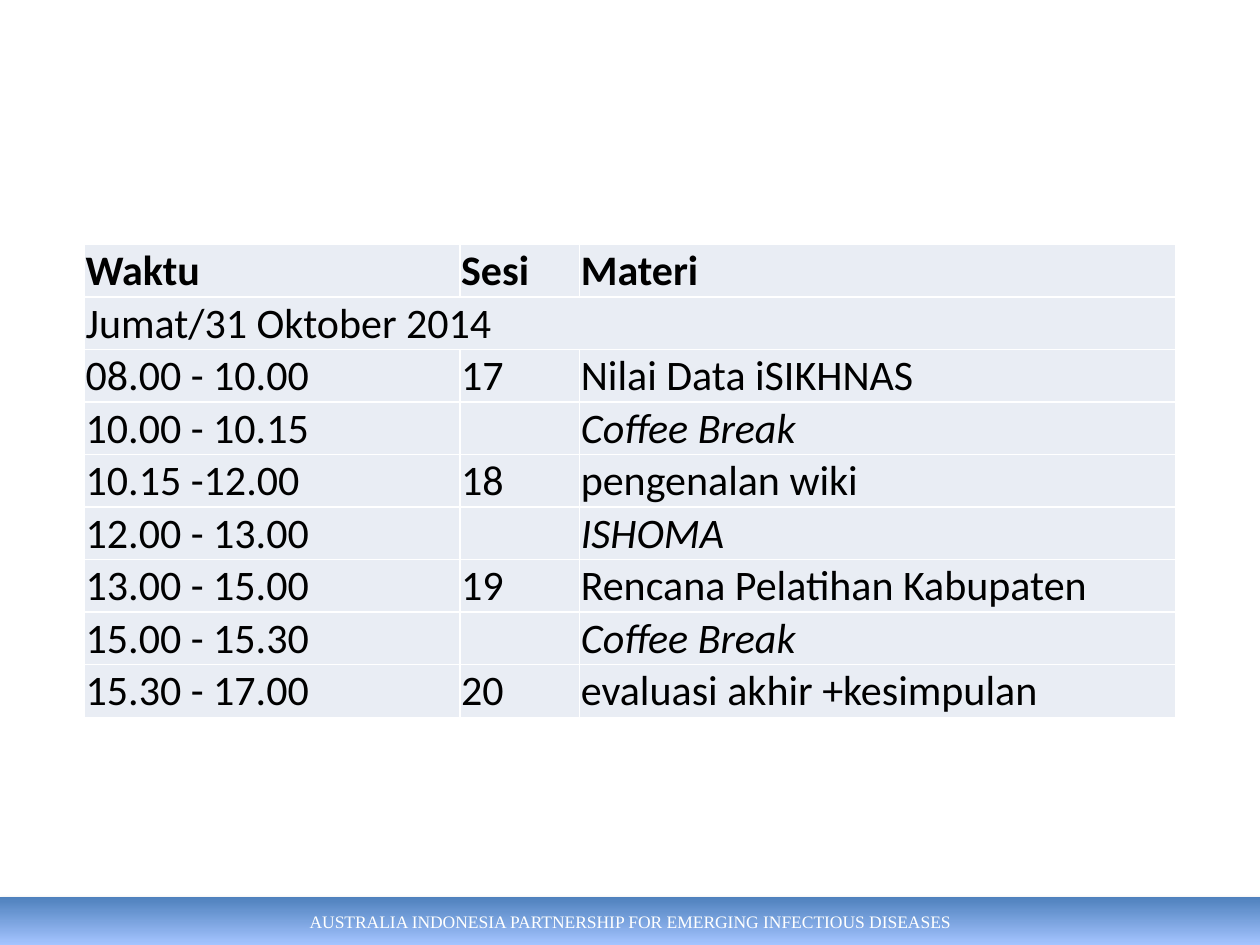
from lxml.etree import SubElement
from pptx import Presentation
from pptx.dml.color import RGBColor
from pptx.enum.shapes import MSO_SHAPE
from pptx.enum.text import MSO_ANCHOR, PP_ALIGN
from pptx.oxml import parse_xml
from pptx.oxml.ns import nsdecls, qn
from pptx.util import Inches, Pt

COLORS = {"top": "4F81BD", "bottom": "A4C4FF", "cell": "E9EDF4",
          "text": "000000", "white": "FFFFFF"}
BODY = {"name": "Calibri", "size": Pt(24), "bold": False, "italic": False}
FOOTER = {"name": "Times New Roman", "size": Pt(10)}
MARGINS = {"margin_left": Inches(0.01), "margin_right": Inches(0.01),
           "margin_top": Inches(0.01), "margin_bottom": 0}
BREAKS = ("Coffee Break", "ISHOMA")
AGENDA = [
    ("Waktu", "Sesi", "Materi"),
    ("Jumat/31 Oktober 2014", "", ""),
    ("08.00 - 10.00", "17", "Nilai Data iSIKHNAS"),
    ("10.00 - 10.15", "", "Coffee Break"),
    ("10.15 -12.00", "18", "pengenalan wiki"),
    ("12.00 - 13.00", "", "ISHOMA"),
    ("13.00 - 15.00", "19", "Rencana Pelatihan Kabupaten"),
    ("15.00 - 15.30", "", "Coffee Break"),
    ("15.30 - 17.00", "20", "evaluasi akhir +kesimpulan"),
]


def rgb(name):
    return RGBColor.from_string(COLORS[name])


def apply(target, values):
    for key, value in values.items():
        setattr(target, key, value)


class SlideBuilder:
    """Hold the style and the current slide."""

    def __init__(self, prs):
        self.s = prs.slides.add_slide(prs.slide_layouts[6])

    def text(self, p, text, style, color):
        p.text = text
        apply(p.font, style)
        p.font.color.rgb = rgb(color)
        for r in p.runs:
            apply(r.font, style)
            r.font.color.rgb = rgb(color)

    def footer(self, text, left, top, width, height):
        sp = self.s.shapes.add_shape(MSO_SHAPE.RECTANGLE, Inches(left), Inches(top),
                                     Inches(width), Inches(height))
        sp.line.fill.background()
        sp.fill.gradient()
        sp.fill.gradient_angle = 270
        for stop, color in zip(sp.fill.gradient_stops, ("top", "bottom")):
            stop.color.rgb = rgb(color)
        sp.shadow.inherit = False
        effects = sp._element.spPr.find(qn("a:effectLst"))
        effects.append(parse_xml(
            f'<a:outerShdw {nsdecls("a")} blurRad="{Pt(3.1)}" dist="{Pt(1.8)}" '
            'dir="5400000" rotWithShape="0"><a:srgbClr val="000000">'
            '<a:alpha val="35000"/></a:srgbClr></a:outerShdw>'))
        tf = sp.text_frame
        tf.vertical_anchor = MSO_ANCHOR.MIDDLE
        p = tf.paragraphs[0]
        p.alignment = PP_ALIGN.CENTER
        self.text(p, text, FOOTER, "white")

    def borders(self, cell):
        tcPr = cell._tc.get_or_add_tcPr()
        for i, side in enumerate(("lnL", "lnR", "lnT", "lnB")):
            ln = parse_xml(f'<a:{side} {nsdecls("a")} w="{Pt(1)}"/>')
            fill = SubElement(ln, qn("a:solidFill"))
            SubElement(fill, qn("a:srgbClr"), val=COLORS["white"])
            tcPr.insert(i, ln)

    def table(self, rows, left, top, widths, row_height):
        tbl = self.s.shapes.add_table(
            len(rows), len(widths), Inches(left), Inches(top),
            Inches(sum(widths)), Inches(row_height * len(rows))).table
        apply(tbl, {"first_row": False, "horz_banding": False})
        for col, width in zip(tbl.columns, widths):
            col.width = Inches(width)
        for i, row in enumerate(rows):
            for j, text in enumerate(row):
                cell = tbl.cell(i, j)
                apply(cell, MARGINS)
                cell.fill.solid()
                cell.fill.fore_color.rgb = rgb("cell")
                self.borders(cell)
                style = {**BODY, "bold": i == 0, "italic": text in BREAKS}
                self.text(cell.text_frame.paragraphs[0], text, style, "text")
        tbl.cell(1, 0).merge(tbl.cell(1, len(widths) - 1))


def main():
    prs = Presentation()
    prs.slide_width, prs.slide_height = Inches(10), Inches(7.5)
    slide = SlideBuilder(prs)
    slide.footer("AUSTRALIA INDONESIA PARTNERSHIP FOR EMERGING INFECTIOUS DISEASES",
                 0, 7.12, 10, 0.38)
    slide.table(AGENDA, 0.67, 1.94, (2.98, 0.95, 4.73), 0.41)
    prs.save("out.pptx")


if __name__ == "__main__":
    main()
